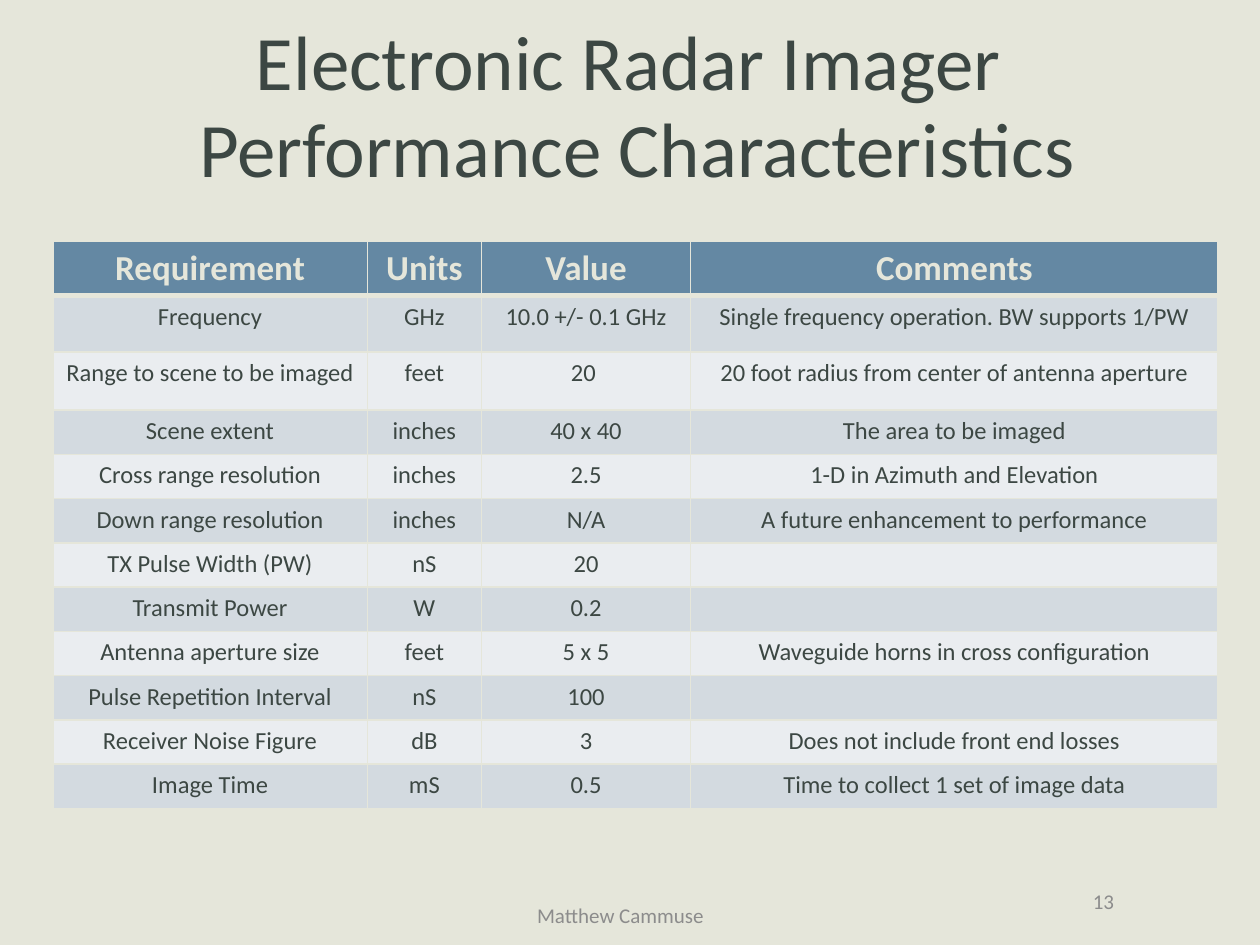
from lxml.etree import SubElement
from pptx import Presentation
from pptx.dml.color import RGBColor
from pptx.enum.text import MSO_ANCHOR as Anchor, PP_ALIGN as Align
from pptx.oxml.ns import qn
from pptx.util import Pt

CREAM = RGBColor(0xE5, 0xE6, 0xDA)
INK = RGBColor(0x3C, 0x47, 0x43)
GRAY = RGBColor(0x8C, 0x8C, 0x8C)
BLUE = RGBColor(0x64, 0x88, 0xA3)
BANDS = (RGBColor(0xD3, 0xDA, 0xE0), RGBColor(0xEA, 0xED, 0xF0))

TITLE = "Electronic Radar Imager \nPerformance Characteristics"
AUTHOR = "Matthew Cammuse"
PAGE_NUMBER = "13"
HEADER = ("Requirement", "Units", "Value", "Comments")
REQUIREMENTS = [
    ("Frequency", "GHz", "10.0 +/- 0.1 GHz", "Single frequency operation. BW supports 1/PW"),
    ("Range to scene to be imaged", "feet", "20 ", "20 foot radius from center of antenna aperture"),
    ("Scene extent", "inches", "40 x 40", "The area to be imaged"),
    ("Cross range resolution", "inches", "2.5", "1-D in Azimuth and Elevation"),
    ("Down range resolution", "inches", "N/A", "A future enhancement to performance"),
    ("TX Pulse Width (PW)", "nS", "20", ""),
    ("Transmit Power", "W", "0.2", ""),
    ("Antenna aperture size", "feet", "5 x 5", "Waveguide horns in cross configuration"),
    ("Pulse Repetition Interval", "nS", "100", ""),
    ("Receiver Noise Figure", "dB", "3", "Does not include front end losses"),
    ("Image Time", "mS", "0.5", "Time to collect 1 set of image data"),
]
TABLE_LEFT, TABLE_TOP = 30.2, 137.6
COLUMN_WIDTHS = (179.7, 65.3, 119.5, 301.5)
ROW_HEIGHTS = [31, 32.4, 33.1] + [25.3] * (len(REQUIREMENTS) - 2)


def write(frame, text, size=14, color=INK, bold=False, align=Align.CENTER, spacing=None):
    para = frame.paragraphs[0]
    para.text = text
    para.alignment = align
    if spacing:
        para.line_spacing = spacing
    for span in para.runs:
        font = span.font
        font.name, font.size, font.bold = "Calibri", Pt(size), bold
        font.color.rgb = color
    if not text:  # keeps an empty cell from growing its row
        SubElement(para._p, qn("a:endParaRPr"), sz=str(size * 100))


def add_text(page, text, left, top, width, height, **style):
    box = page.shapes.add_textbox(Pt(left), Pt(top), Pt(width), Pt(height))
    box.text_frame.word_wrap = True
    box.text_frame.vertical_anchor = Anchor.MIDDLE
    write(box.text_frame, text, **style)


def add_borders(cell, top=1, bottom=1):
    properties = cell._tc.get_or_add_tcPr()
    for side, width in (("L", 1), ("R", 1), ("T", top), ("B", bottom)):
        line = SubElement(properties, qn(f"a:ln{side}"), w=str(Pt(width)))
        fill = SubElement(line, qn("a:solidFill"))
        SubElement(fill, qn("a:srgbClr"), val=str(CREAM))


def add_requirements_table(page):
    rows = [HEADER] + REQUIREMENTS
    table = page.shapes.add_table(
        len(rows), len(HEADER), Pt(TABLE_LEFT), Pt(TABLE_TOP),
        Pt(sum(COLUMN_WIDTHS)), Pt(sum(ROW_HEIGHTS))).table
    for column, width in zip(table.columns, COLUMN_WIDTHS):
        column.width = Pt(width)
    for row, height in zip(table.rows, ROW_HEIGHTS):
        row.height = Pt(height)
    for r, texts in enumerate(rows):
        for c, text in enumerate(texts):
            cell = table.cell(r, c)
            add_borders(cell, top=3 if r == 1 else 1, bottom=3 if r == 0 else 1)
            cell.fill.solid()
            cell.fill.fore_color.rgb = BANDS[(r - 1) % 2] if r else BLUE
            if r:
                write(cell.text_frame, text)
            else:
                write(cell.text_frame, text, size=20, color=CREAM, bold=True)


def main():
    deck = Presentation()
    deck.slide_width, deck.slide_height = Pt(720), Pt(540)
    page = deck.slides.add_slide(deck.slide_layouts[6])
    page.background.fill.solid()
    page.background.fill.fore_color.rgb = CREAM
    add_text(page, AUTHOR, 186.5, 508.3, 336.2, 28.8, size=12, color=GRAY)
    add_text(page, PAGE_NUMBER, 527.8, 500.4, 115.9, 28.8, size=12, color=GRAY, align=Align.RIGHT)
    add_text(page, TITLE, 54, 18, 620.6, 87.1, size=44, spacing=0.95)
    add_requirements_table(page)
    deck.save("out.pptx")


if __name__ == "__main__":
    main()
